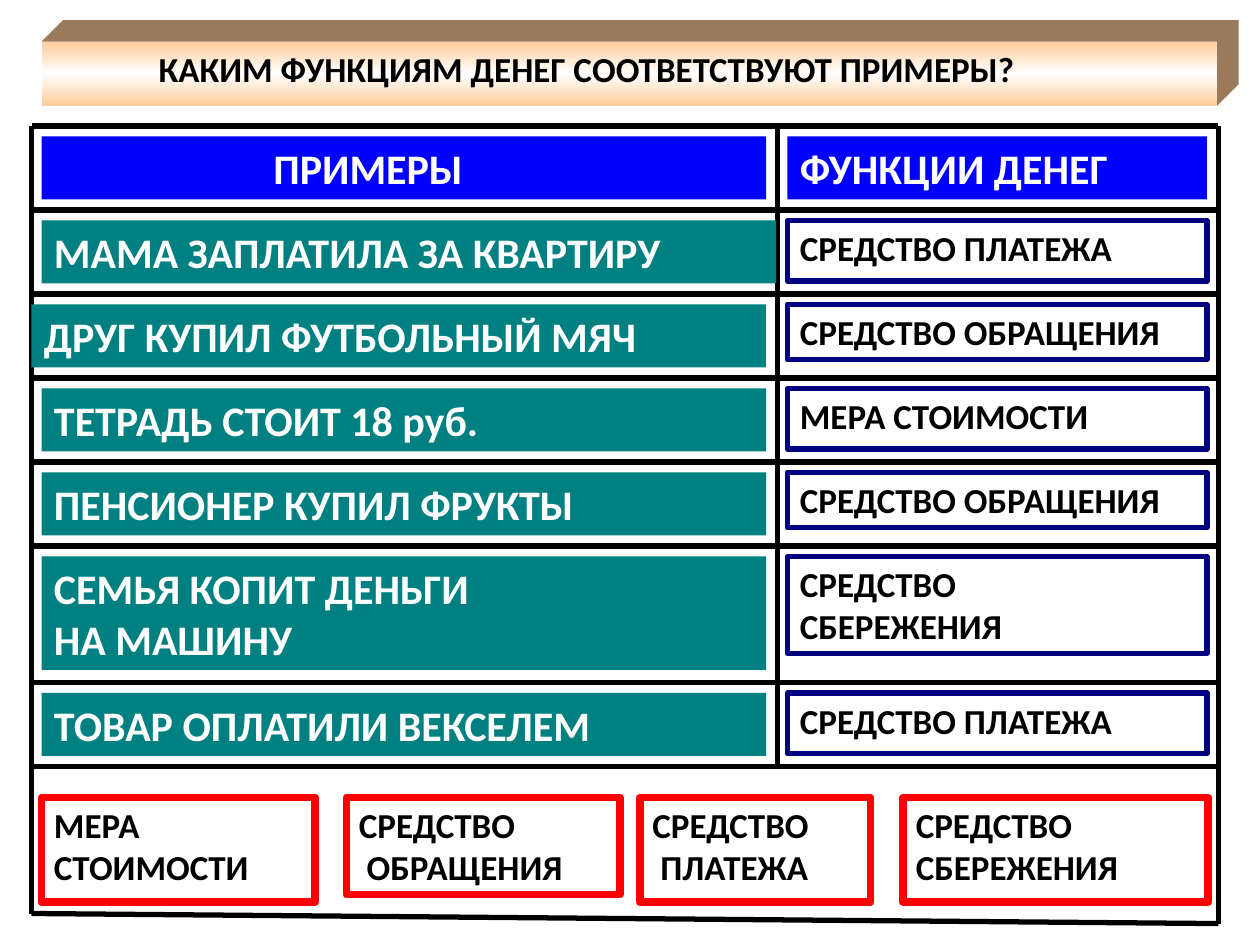
from copy import deepcopy
from itertools import accumulate

from pptx import Presentation
from pptx.dml.color import RGBColor
from pptx.enum.shapes import MSO_CONNECTOR, MSO_SHAPE
from pptx.enum.text import MSO_ANCHOR, MSO_AUTO_SIZE, PP_ALIGN
from pptx.oxml.ns import qn
from pptx.oxml.xmlchemy import OxmlElement
from pptx.util import Inches, Pt

RECTANGLE, STRAIGHT = MSO_SHAPE.RECTANGLE, MSO_CONNECTOR.STRAIGHT
TOP, LEFT, GROW = MSO_ANCHOR.TOP, PP_ALIGN.LEFT, MSO_AUTO_SIZE.SHAPE_TO_FIT_TEXT

# Content
TITLE = "КАКИМ ФУНКЦИЯМ ДЕНЕГ СООТВЕТСТВУЮТ ПРИМЕРЫ?"
HEADERS = ("ПРИМЕРЫ", "ФУНКЦИИ ДЕНЕГ")
# example lines, example (left, width, height), answer lines, answer height
ROWS = [
    (["МАМА ЗАПЛАТИЛА ЗА КВАРТИРУ"], (0.33, 5.83, 0.5), ["СРЕДСТВО ПЛАТЕЖА"], 0.48),
    (["ДРУГ КУПИЛ ФУТБОЛЬНЫЙ МЯЧ"], (0.25, 5.83, 0.5), ["СРЕДСТВО ОБРАЩЕНИЯ"], 0.44),
    (["ТЕТРАДЬ СТОИТ 18 руб."], (0.33, 5.75, 0.5), ["МЕРА СТОИМОСТИ"], 0.48),
    (["ПЕНСИОНЕР КУПИЛ ФРУКТЫ"], (0.33, 5.75, 0.5), ["СРЕДСТВО ОБРАЩЕНИЯ"], 0.44),
    (["СЕМЬЯ КОПИТ ДЕНЬГИ", "НА МАШИНУ"], (0.33, 5.75, 0.9),
     ["СРЕДСТВО", "СБЕРЕЖЕНИЯ"], 0.77),
    (["ТОВАР ОПЛАТИЛИ ВЕКСЕЛЕМ"], (0.33, 5.75, 0.5), ["СРЕДСТВО ПЛАТЕЖА"], 0.48),
]
# lines, left, width, height
CHOICES = [
    (["МЕРА", "СТОИМОСТИ"], 0.33, 2.17, 0.83),
    (["СРЕДСТВО", " ОБРАЩЕНИЯ"], 2.75, 2.17, 0.77),
    (["СРЕДСТВО", " ПЛАТЕЖА"], 5.08, 1.83, 0.83),
    (["СРЕДСТВО", "СБЕРЕЖЕНИЯ"], 7.17, 2.42, 0.83),
]

THEME = {
    "font": "Calibri", "large": 24, "small": 20, "rule": 3,
    "black": "000000", "white": "FFFFFF", "peach": "FFCC99", "side": "997A5C",
}
HEADER = {"fill": "0000FF", "color": THEME["white"], "size": THEME["large"]}
EXAMPLE = {**HEADER, "fill": "008080"}
ANSWER = {"fill": THEME["white"], "color": THEME["black"], "size": THEME["small"],
          "line": ("000080", 3)}
CHOICE = {**ANSWER, "line": ("FF0000", 4.5)}
BANNER = {**ANSWER, "fill": THEME["peach"], "line": None}

# Grid
GRID_LEFT, GRID_MIDDLE, GRID_RIGHT = 0.25, 6.17, 9.67
GRID_TOP, BOTTOM_LEFT, BOTTOM_RIGHT = 1, 7.25, 7.33
ROW, TALL_ROW, GAP = 2 / 3, 13 / 12, 1 / 12
HEIGHTS = [ROW] + [TALL_ROW if len(row[0]) > 1 else ROW for row in ROWS]
EDGES = list(accumulate(HEIGHTS, initial=GRID_TOP))
EXAMPLE_LEFT, EXAMPLE_WIDTH = 0.33, 5.75
ANSWER_LEFT, ANSWER_WIDTH = 6.25, 3.33
CHOICE_TOP = 6.33
BANNER_BOX, DEPTH = (0.33, 0.33, 9.33, 0.51), 0.17


def paint(shape, fill, line=None):
    shape.shadow.inherit = False
    shape.fill.solid()
    shape.fill.fore_color.rgb = RGBColor.from_string(fill)
    if line:
        shape.line.color.rgb = RGBColor.from_string(line[0])
        shape.line.width = Pt(line[1])
    else:
        shape.line.fill.background()


def add_box(slide, lines, box, style, indent=0.1):
    shape = slide.shapes.add_shape(RECTANGLE, *map(Inches, box))
    paint(shape, style["fill"], style.get("line"))
    frame = shape.text_frame
    frame.text = "\n".join(lines)
    frame_format = {"word_wrap": True, "auto_size": GROW, "vertical_anchor": TOP,
                    "margin_left": Inches(indent)}
    for name, value in frame_format.items():
        setattr(frame, name, value)
    font_format = {"name": THEME["font"], "size": Pt(style["size"]), "bold": True}
    for paragraph in frame.paragraphs:
        paragraph.alignment = LEFT
        font = paragraph.runs[0].font
        for name, value in font_format.items():
            setattr(font, name, value)
        font.color.rgb = RGBColor.from_string(style["color"])
    return shape


def add_rule(slide, *ends):
    rule = slide.shapes.add_connector(STRAIGHT, *map(Inches, ends))
    rule.line.color.rgb = RGBColor.from_string(THEME["black"])
    rule.line.width = Pt(THEME["rule"])
    rule._element.spPr.append(OxmlElement("a:effectLst"))


def add_banner(slide):
    left, top, width, height = BANNER_BOX
    right, bottom = left + width, top + height
    # Top and right faces of the block
    outline = [(left, top), (left + DEPTH, top - DEPTH), (right + DEPTH, top - DEPTH),
               (right + DEPTH, bottom - DEPTH), (right, bottom), (right, top)]
    points = [(Inches(x), Inches(y)) for x, y in outline]
    builder = slide.shapes.build_freeform(*points[0], scale=1.0)
    builder.add_line_segments(points[1:], close=True)
    paint(builder.convert_to_shape(), THEME["side"])

    # Front face with a three-stop gradient
    front = add_box(slide, [TITLE], BANNER_BOX, BANNER, indent=0.93)
    front.fill.gradient()
    front.fill.gradient_angle = 90
    stop_list = front._element.spPr.find(qn("a:gradFill")).find(qn("a:gsLst"))
    stop_list.insert(1, deepcopy(stop_list[0]))
    colors = (THEME["peach"], THEME["white"], THEME["peach"])
    for stop, position, color in zip(front.fill.gradient_stops, (0, 0.5, 1), colors):
        stop.position = position
        stop.color.rgb = RGBColor.from_string(color)


def main():
    presentation = Presentation()
    presentation.slide_width, presentation.slide_height = Inches(10), Inches(7.5)
    slide = presentation.slides.add_slide(presentation.slide_layouts[6])

    # Grid lines
    for edge in EDGES:
        add_rule(slide, GRID_LEFT, edge, GRID_RIGHT, edge)
    add_rule(slide, GRID_LEFT, BOTTOM_LEFT, GRID_RIGHT, BOTTOM_RIGHT)
    for x, end in ((GRID_LEFT, BOTTOM_LEFT), (GRID_MIDDLE, EDGES[-1]),
                   (GRID_RIGHT, BOTTOM_RIGHT)):
        add_rule(slide, x, GRID_TOP, x, end)

    # Column headers
    columns = ((EXAMPLE_LEFT, EXAMPLE_WIDTH, 1.84), (ANSWER_LEFT, ANSWER_WIDTH, 0.1))
    for header, (left, width, indent) in zip(HEADERS, columns):
        add_box(slide, [header], (left, GRID_TOP + GAP, width, 0.5), HEADER, indent)

    # Examples and their answers
    for edge, (example, (left, width, height), answer, answer_height) in zip(EDGES[1:], ROWS):
        top = edge + GAP
        add_box(slide, example, (left, top, width, height), EXAMPLE)
        add_box(slide, answer, (ANSWER_LEFT, top, ANSWER_WIDTH, answer_height), ANSWER)

    # Choices below the grid
    for lines, left, width, height in CHOICES:
        add_box(slide, lines, (left, CHOICE_TOP, width, height), CHOICE)

    add_banner(slide)
    presentation.save("out.pptx")


if __name__ == "__main__":
    main()
